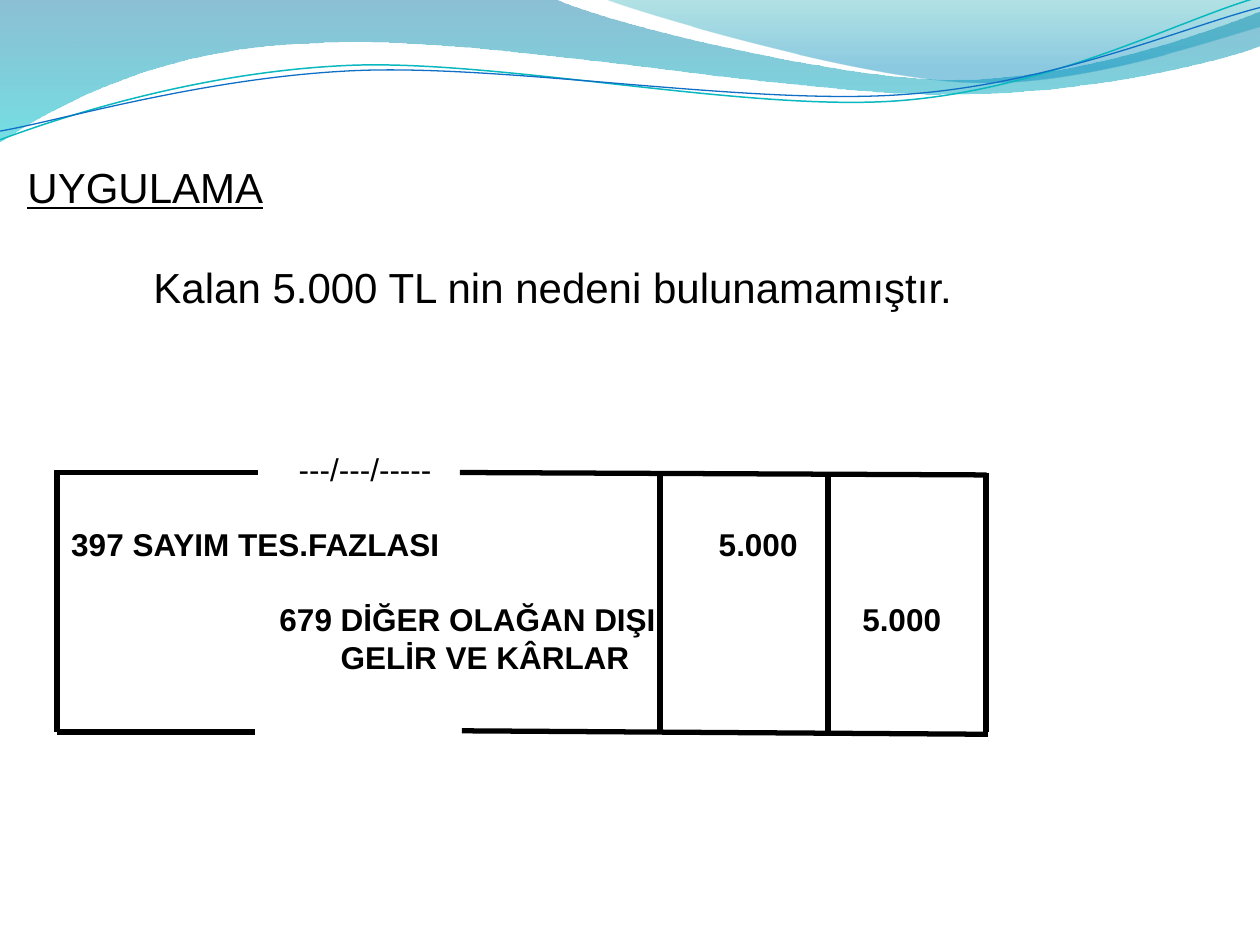
from lxml import etree
from pptx import Presentation
from pptx.dml.color import RGBColor
from pptx.enum import shapes, text
from pptx.oxml import ns
from pptx.util import Pt

COLORS = {
    "ink": "000000",
    "deep": "0074A1", "aqua": "00C6CF",
    "teal": "00A1A9", "sky": "008BBF",
    "teal_line": "0AB8BF", "blue_line": "0F6FC6",
}
FONT = "Arial"
RULE_TOP, RULE_BOTTOM = 270, 418.3

# Outlines: a pair is a point, six numbers are a Bezier curve
WAVE_BACK = [
    (0, 0), (316.8, -0.7),
    (342.7, 12.2, 478.1, 45.4, 545.8, 45.4),
    (614.2, 45.4, 689.8, 18.7, 720, 6.5), (720.7, 25.9),
    (707.8, 31.7, 626.4, 54.7, 537.1, 54),
    (447.8, 54, 275, 20.2, 185, 24.5),
    (92.9, 25.9, 33.1, 59.8, -0.7, 81.4), (0, 0),
]
WAVE_FRONT = [
    (344.9, -0.7),
    (366.5, 7.9, 491, 44.6, 553.7, 46.8),
    (616.3, 49.7, 691.9, 23, 720, 15.1), (720, 0), (344.9, -0.7),
]
TEAL_CURVE = [
    (0, 79.9),
    (34.6, 67, 113.8, 41, 199.4, 37.4),
    (284.4, 33.8, 427, 64.1, 513.4, 57.6),
    (599.8, 51.1, 675.4, 10.8, 718.6, -1.4),
]
BLUE_CURVE = [
    (0, 74.9),
    (33.8, 69.1, 118.1, 43.9, 203.8, 40.3),
    (290.2, 36.7, 429.8, 60.5, 516.2, 54),
    (601.9, 48.2, 677.5, 15.1, 720, 4.3),
]

# Lines of text: wording, size, bold, space before, tab stops
LINES = [
    ("UYGULAMA", 24, False, 0, ()),
    ("\tKalan 5.000 TL nin nedeni bulunamamıştır.", 24, False, 28.8, (72,)),
    ("\t---/---/-----", 18, False, 78.4, (155,)),
    ("\t397 SAYIM TES.FAZLASI\t5.000", 18, True, 21.4, (25, 395)),
    ("\t679 DİĞER OLAĞAN DIŞI\t5.000", 18, True, 21.4, (144, 477)),
    ("\tGELİR VE KÂRLAR", 18, True, 0, (179,)),
]


def color(name):
    return RGBColor.from_string(COLORS[name])


def add_freeform(s, outline, close):
    """Build the outline through its end points, then bend the curved parts."""
    ends = [(Pt(item[-2]), Pt(item[-1])) for item in outline]
    builder = s.shapes.build_freeform(*ends[0])
    builder.add_line_segments(ends[1:], close=close)
    sp = builder.convert_to_shape()
    sp.shadow.inherit = False
    segments = list(sp._element.spPr.iter(ns.qn("a:lnTo")))
    for segment, item in zip(segments, outline[1:]):
        if len(item) == 6:
            segment.tag = ns.qn("a:cubicBezTo")
            for i in (0, 2):
                pt = etree.Element(ns.qn("a:pt"), x=str(Pt(item[i]) - sp.left),
                                   y=str(Pt(item[i + 1]) - sp.top))
                segment.insert(i // 2, pt)
    return sp


def add_wave(s, outline, stops):
    """Add a filled wave; each stop is position, colour and opacity in percent."""
    sp = add_freeform(s, outline, True)
    sp.line.fill.background()
    sp.fill.gradient()
    sp.fill.gradient_angle = 270
    for stop, (position, name, _) in zip(sp.fill.gradient_stops, stops):
        stop.position = position
        stop.color.rgb = color(name)
    rgbs = sp._element.spPr.iter(ns.qn("a:srgbClr"))
    for rgb, (_, _, opacity) in zip(rgbs, stops):
        etree.SubElement(rgb, ns.qn("a:alpha"), val=str(opacity * 1000))


def add_curve(s, outline, name, width):
    sp = add_freeform(s, outline, False)
    sp.fill.background()
    sp.line.color.rgb = color(name)
    sp.line.width = Pt(width)


def add_rule(s, x1, y1, x2, y2, width):
    line = s.shapes.add_connector(shapes.MSO_CONNECTOR.STRAIGHT,
                                  Pt(x1), Pt(y1), Pt(x2), Pt(y2))
    line.line.color.rgb = color("ink")
    line.line.width = Pt(width)
    etree.SubElement(line._element.spPr, ns.qn("a:effectLst"))


def add_text(s, box, lines):
    tf = s.shapes.add_textbox(*map(Pt, box)).text_frame
    tf.word_wrap = True
    tf.text = "\n".join(line[0] for line in lines)
    for p, (_, size, bold, space, stops) in zip(tf.paragraphs, lines):
        p.alignment = text.PP_ALIGN.JUSTIFY
        p.space_before = Pt(space)
        if stops:
            tabs = etree.SubElement(p._p.get_or_add_pPr(), ns.qn("a:tabLst"))
            for stop in stops:
                etree.SubElement(tabs, ns.qn("a:tab"), pos=str(Pt(stop)), algn="l")
        for r in p.runs:
            r.font.name, r.font.size, r.font.bold = FONT, Pt(size), bold
            r.font.color.rgb = color("ink")
    return tf


def main():
    prs = Presentation()
    prs.slide_width, prs.slide_height = Pt(720), Pt(540)
    s = prs.slides.add_slide(prs.slide_layouts[6])

    # Waves along the top
    add_wave(s, WAVE_BACK, [(0, "deep", 45), (1, "aqua", 55)])
    add_wave(s, WAVE_FRONT, [(0, "teal", 30), (0.8, "sky", 45)])
    add_curve(s, TEAL_CURVE, "teal_line", 0.85)
    add_curve(s, BLUE_CURVE, "blue_line", 0.75)

    # Heading, statement and journal entry
    tf = add_text(s, (8.64, 88.56, 676, 450), LINES)
    tf.paragraphs[0].runs[0].font.underline = True

    # Journal frame, open at the date
    add_rule(s, 33, RULE_TOP, 147.6, RULE_TOP, 3)
    add_rule(s, 262.8, RULE_TOP, 563.8, 271.4, 3)
    for x, top in ((32.4, 268.6), (377.3, RULE_TOP), (473, RULE_TOP), (563.5, RULE_TOP)):
        add_rule(s, x, top, x, RULE_BOTTOM, 3.5)
    add_rule(s, 32.4, RULE_BOTTOM, 146, RULE_BOTTOM, 3)
    add_rule(s, 264, 417.6, 564.5, 419.6, 3)

    prs.save("out.pptx")


if __name__ == "__main__":
    main()
